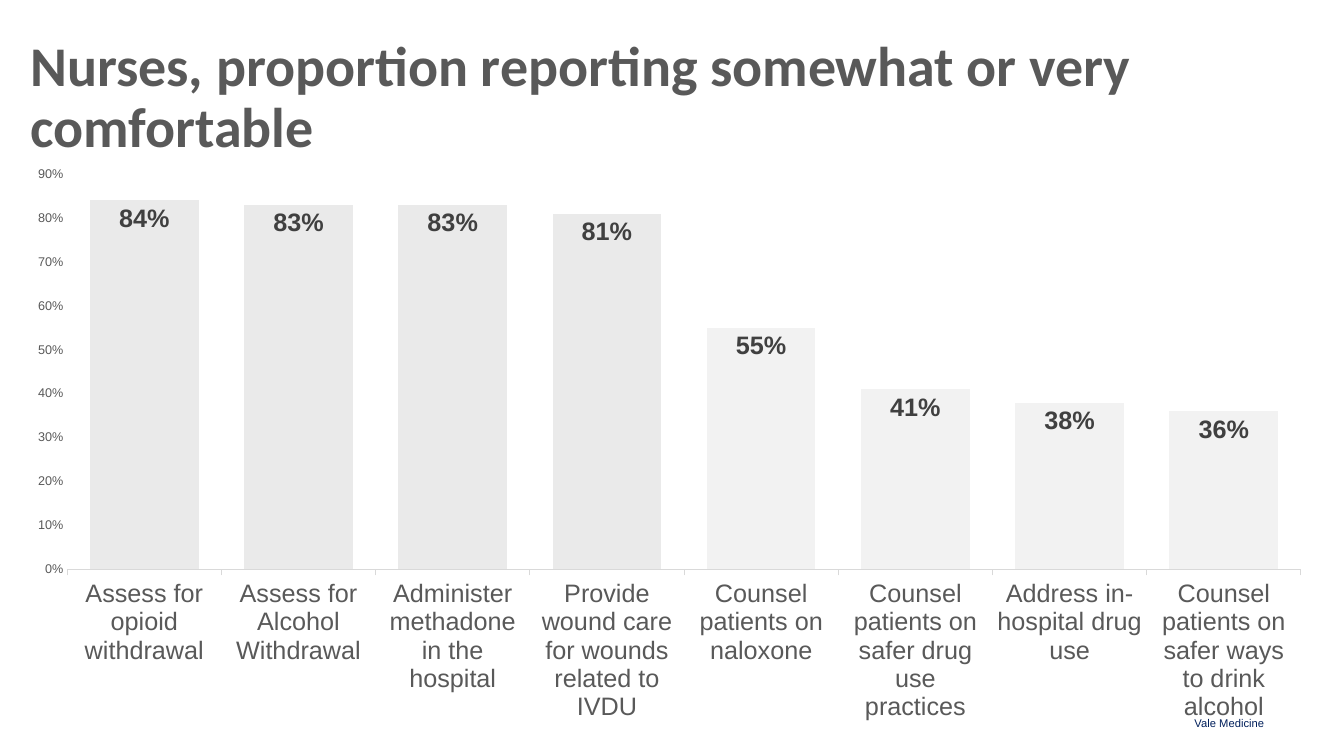
"""Build a slide charting how comfortable nurses are with eight care tasks."""
from lxml import etree
from pptx import Presentation
from pptx.chart.data import CategoryChartData
from pptx.dml.color import RGBColor
from pptx.enum.chart import XL_CHART_TYPE, XL_LABEL_POSITION, XL_TICK_MARK
from pptx.enum.text import MSO_ANCHOR, MSO_AUTO_SIZE, PP_ALIGN
from pptx.oxml.ns import qn
from pptx.util import Inches, Pt

COLUMNS = XL_CHART_TYPE.COLUMN_CLUSTERED
INSIDE_END = XL_LABEL_POSITION.INSIDE_END
TICK_NONE, TICK_OUT = XL_TICK_MARK.NONE, XL_TICK_MARK.OUTSIDE
TOP, BOTTOM = MSO_ANCHOR.TOP, MSO_ANCHOR.BOTTOM
LEFT, RIGHT = PP_ALIGN.LEFT, PP_ALIGN.RIGHT
NO_AUTOFIT = MSO_AUTO_SIZE.NONE

COLORS = {
    "grey": "595959",
    "label": "404040",
    "axis": "D9D9D9",
    "navy": "011F5B",
    "high": "EAEAEA",
    "low": "F2F2F2",
    "black": "000000",
}
COMFORT = {
    "Assess for opioid withdrawal": 0.84,
    "Assess for Alcohol Withdrawal": 0.83,
    "Administer methadone in the hospital": 0.83,
    "Provide wound care for wounds related to IVDU": 0.81,
    "Counsel patients on naloxone": 0.55,
    "Counsel patients on safer drug use practices": 0.41,
    "Address in-hospital drug use": 0.38,
    "Counsel patients on safer ways to drink alcohol": 0.36,
}
HIGH_COMFORT = 0.8
PLOT_AREA = {"x": 0.05, "y": 0.02, "w": 0.918, "h": 0.666}


def color(name):
    """Return the named colour."""
    return RGBColor.from_string(COLORS[name])


def style_font(font, face, size, color_name, bold=False):
    """Set face, size, colour and weight of a font."""
    font.name, font.size, font.bold = face, Pt(size), bold
    font.color.rgb = color(color_name)


def place(shape, left, top, width, height):
    """Position a shape, given in inches."""
    shape.left, shape.top = Inches(left), Inches(top)
    shape.width, shape.height = Inches(width), Inches(height)


def write_line(shape, text, anchor, align):
    """Put one paragraph into a frame without margins and return it."""
    frame = shape.text_frame
    frame.text = text
    frame.word_wrap = True
    frame.auto_size = NO_AUTOFIT
    frame.vertical_anchor = anchor
    frame.margin_left = frame.margin_right = 0
    frame.margin_top = frame.margin_bottom = 0
    paragraph = frame.paragraphs[0]
    paragraph.alignment = align
    return paragraph


def add_title(slide, text):
    """Fill and format the title placeholder."""
    title = slide.shapes.title
    place(title, 0.3, 0.38, 11.76, 0.61)
    heading = write_line(title, text, TOP, LEFT)
    heading.line_spacing = 0.9
    heading.space_before = Pt(0)
    style_font(heading.runs[0].font, "Calibri", 40, "grey", bold=True)


def add_footer(slide, text):
    """Add the small organisation name at the bottom right."""
    footer = slide.shapes.add_textbox(
        Inches(9.9), Inches(7.04), Inches(2.64), Inches(0.2))
    organisation = write_line(footer, text, BOTTOM, RIGHT)
    style_font(organisation.runs[0].font, "Arial", 8, "navy")


def set_plot_area(chart):
    """Fix the inner plot area as fractions of the chart."""
    plot_area = chart._chartSpace.chart.plotArea
    for old_layout in plot_area.findall(qn("c:layout")):
        plot_area.remove(old_layout)
    layout = etree.Element(qn("c:layout"))
    manual = etree.SubElement(layout, qn("c:manualLayout"))
    settings = {"layoutTarget": "inner", "xMode": "edge", "yMode": "edge"}
    for tag, value in {**settings, **PLOT_AREA}.items():
        etree.SubElement(manual, qn(f"c:{tag}")).set("val", str(value))
    plot_area.insert(0, layout)


def keep_labels_level(axis):
    """Keep axis labels horizontal so that long ones wrap."""
    body = axis._element.find(qn("c:txPr")).find(qn("a:bodyPr"))
    body.set("rot", "0")
    body.set("vert", "horz")


def format_axes(chart):
    """Style the task axis and the percentage axis."""
    tasks, share = chart.category_axis, chart.value_axis
    for axis, size, tick in ((tasks, 18, TICK_OUT), (share, 9, TICK_NONE)):
        style_font(axis.tick_labels.font, "Arial", size, "grey")
        keep_labels_level(axis)
        axis.major_tick_mark = tick
        axis.minor_tick_mark = TICK_NONE
        axis.has_major_gridlines = False
    tasks.format.line.color.rgb = color("axis")
    tasks.format.line.width = Pt(0.75)
    share.format.line.fill.background()
    share.minimum_scale, share.maximum_scale, share.major_unit = 0, 0.9, 0.1
    share.tick_labels.number_format = "0%"
    share.tick_labels.number_format_is_linked = False


def format_columns(plot):
    """Set column spacing, colours and value labels."""
    plot.gap_width, plot.overlap = 42, -27
    plot.vary_by_categories = False
    series = plot.series[0]
    series.format.fill.solid()
    series.format.fill.fore_color.rgb = color("navy")
    for index, value in enumerate(series.values):
        fill = series.points[index].format.fill
        fill.solid()
        fill.fore_color.rgb = color("high" if value > HIGH_COMFORT else "low")
    labels = series.data_labels
    labels.show_value = True
    labels.position = INSIDE_END
    labels.number_format = "0%"
    labels.number_format_is_linked = False
    style_font(labels.font, "Arial", 18, "label", bold=True)


def add_comfort_chart(slide):
    """Add the column chart of comfort by task."""
    data = CategoryChartData(number_format="0%")
    data.categories = list(COMFORT)
    data.add_series("Series 1", list(COMFORT.values()))
    chart = slide.shapes.add_chart(
        COLUMNS, Inches(0), Inches(1.61), Inches(13.33), Inches(5.89), data).chart
    chart.has_title = chart.has_legend = False
    style_font(chart.font, "Arial", 10, "black")
    set_plot_area(chart)
    format_axes(chart)
    format_columns(chart.plots[0])


def main():
    """Build and save the slide."""
    deck = Presentation()
    deck.slide_width, deck.slide_height = Inches(13.33), Inches(7.5)
    slide = deck.slides.add_slide(deck.slide_layouts[5])
    add_footer(slide, "Vale Medicine")
    add_title(slide, "Nurses, proportion reporting somewhat or very comfortable")
    add_comfort_chart(slide)
    deck.save("out.pptx")


if __name__ == "__main__":
    main()
